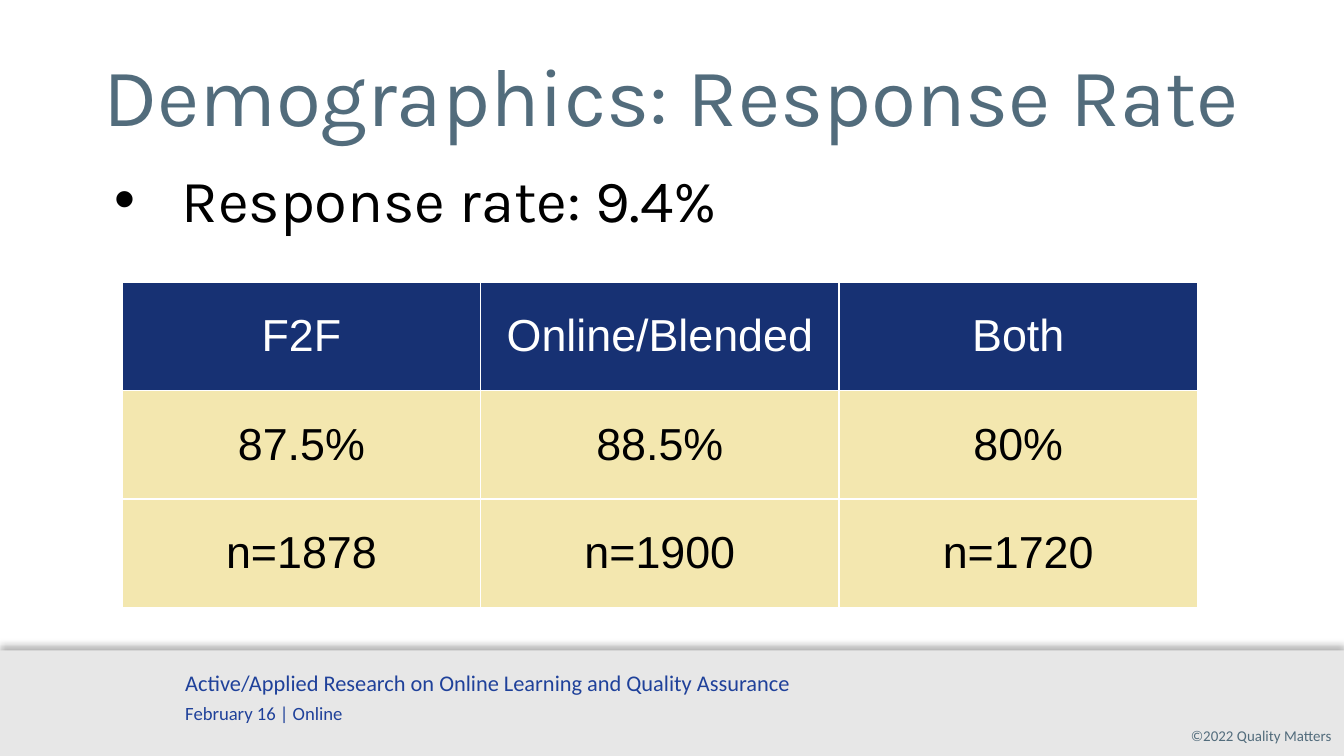
"""Build the response-rate demographics slide."""
import pptx
import pptx.dml.color
import pptx.enum.shapes
import pptx.enum.text
import pptx.oxml
import pptx.oxml.ns
import pptx.util

WIDTH = 10
HEIGHT = WIDTH * 9 / 16
ALIGN = pptx.enum.text.PP_ALIGN
ANCHOR = pptx.enum.text.MSO_ANCHOR

TITLE = "Demographics: Response Rate"
BULLET = "Response rate: 9.4%"
ROWS = [
    ("F2F", "Online/Blended", "Both"),
    ("87.5%", "88.5%", "80%"),
    ("n=1878", "n=1900", "n=1720"),
]
EVENT = [
    ("Active/Applied Research on Online Learning and Quality Assurance", 12, 0),
    ("February 16 | Online", 10, 3),
]
COPYRIGHT = "©2022 Quality Matters"

BAR_TOP = 4.84
TABLE_BOX = (0.91, 2.1, 8, 2.42)
SLATE, BLUE, NAVY, CREAM = "526C7C", "1F419A", "173173", "F3E7AF"
SHADOW = """<a:effectLst {}><a:outerShdw blurRad="50800" dist="38100" dir="16200000"
 algn="b" rotWithShape="0"><a:srgbClr val="000000"><a:alpha val="29000"/></a:srgbClr>
 </a:outerShdw></a:effectLst>"""
BORDER = """<a:{} {} w="12700"><a:solidFill><a:srgbClr val="FFFFFF"/></a:solidFill></a:{}>"""
BULLET_MARKS = (
    '<a:buClr {}><a:srgbClr val="000000"/></a:buClr>',
    '<a:buFont {} typeface="Arial"/>',
    '<a:buChar {} char="•"/>',
)
NAMESPACE = pptx.oxml.ns.nsdecls("a")


def color(value):
    return pptx.dml.color.RGBColor.from_string(value)


def inches(values):
    return [pptx.util.Inches(value) for value in values]


def apply(target, formats):
    for name, value in formats.items():
        setattr(target, name, value)


def write(paragraph, text, size, font, fill, **formats):
    run = paragraph.add_run()
    run.text = text
    apply(run.font, {"size": pptx.util.Pt(size), "name": font})
    run.font.color.rgb = color(fill)
    apply(paragraph, formats)


def place(shape, box, **formats):
    apply(shape, dict(zip(("left", "top", "width", "height"), inches(box))))
    frame = {"word_wrap": True, "auto_size": pptx.enum.text.MSO_AUTO_SIZE.NONE}
    apply(shape.text_frame, frame | formats)
    return shape.text_frame.paragraphs[0]


def add_bar(slide):
    box = inches((0, BAR_TOP, WIDTH, HEIGHT - BAR_TOP))
    bar = slide.shapes.add_shape(pptx.enum.shapes.MSO_SHAPE.RECTANGLE, *box)
    bar.fill.solid()
    bar.fill.fore_color.rgb = color("E7E7E7")
    bar.line.fill.background()
    bar._element.spPr.append(pptx.oxml.parse_xml(SHADOW.format(NAMESPACE)))


def add_footer(slide):
    copyright_box = slide.shapes.add_textbox(0, 0, 0, 0)
    paragraph = place(copyright_box, (8.32, 5.36, 1.59, 0.24), margin_right=0)
    write(paragraph, COPYRIGHT, 8, "Calibri", SLATE, alignment=ALIGN.RIGHT)
    event_box = slide.shapes.add_textbox(0, 0, 0, 0)
    paragraph = place(event_box, (1.28, 4.93, 6.39, 0.51))
    for index, (text, size, space) in enumerate(EVENT):
        if index:
            paragraph = event_box.text_frame.add_paragraph()
        write(paragraph, text, size, "Calibri", BLUE, space_before=pptx.util.Pt(space))


def fill_placeholders(slide):
    paragraph = place(slide.shapes.title, (0.5, 0.23, 9, 0.94),
                      vertical_anchor=ANCHOR.MIDDLE)
    write(paragraph, TITLE, 44, "Karla", SLATE, alignment=ALIGN.CENTER)
    paragraph = place(slide.placeholders[1], (0.5, 1.16, 9, 3.52))
    properties = paragraph._p.get_or_add_pPr()
    for name, value in (("marL", 0.75), ("indent", -0.5)):
        properties.set(name, str(pptx.util.Inches(value)))
    for markup in BULLET_MARKS:
        properties.append(pptx.oxml.parse_xml(markup.format(NAMESPACE)))
    write(paragraph, BULLET, 32, "Karla", "000000", space_before=pptx.util.Pt(0))


def add_rates(slide):
    table = slide.shapes.add_table(len(ROWS), len(ROWS[0]), *inches(TABLE_BOX)).table
    for row, texts in enumerate(ROWS):
        fill, ink = (CREAM, "000000") if row else (NAVY, "FFFFFF")
        for column, text in enumerate(texts):
            cell = table.cell(row, column)
            cell.vertical_anchor = ANCHOR.MIDDLE
            write(cell.text_frame.paragraphs[0], text, 24, "Arial", ink,
                  alignment=ALIGN.CENTER)
            properties = cell._tc.get_or_add_tcPr()
            for side in ("lnL", "lnR", "lnT", "lnB"):
                properties.append(pptx.oxml.parse_xml(BORDER.format(side, NAMESPACE, side)))
            cell.fill.solid()
            cell.fill.fore_color.rgb = color(fill)


def main():
    presentation = pptx.Presentation()
    size = inches((WIDTH, HEIGHT))
    apply(presentation, dict(zip(("slide_width", "slide_height"), size)))
    slide = presentation.slides.add_slide(presentation.slide_layouts[1])
    add_bar(slide)
    add_footer(slide)
    fill_placeholders(slide)
    add_rates(slide)
    presentation.save("out.pptx")


if __name__ == "__main__":
    main()
